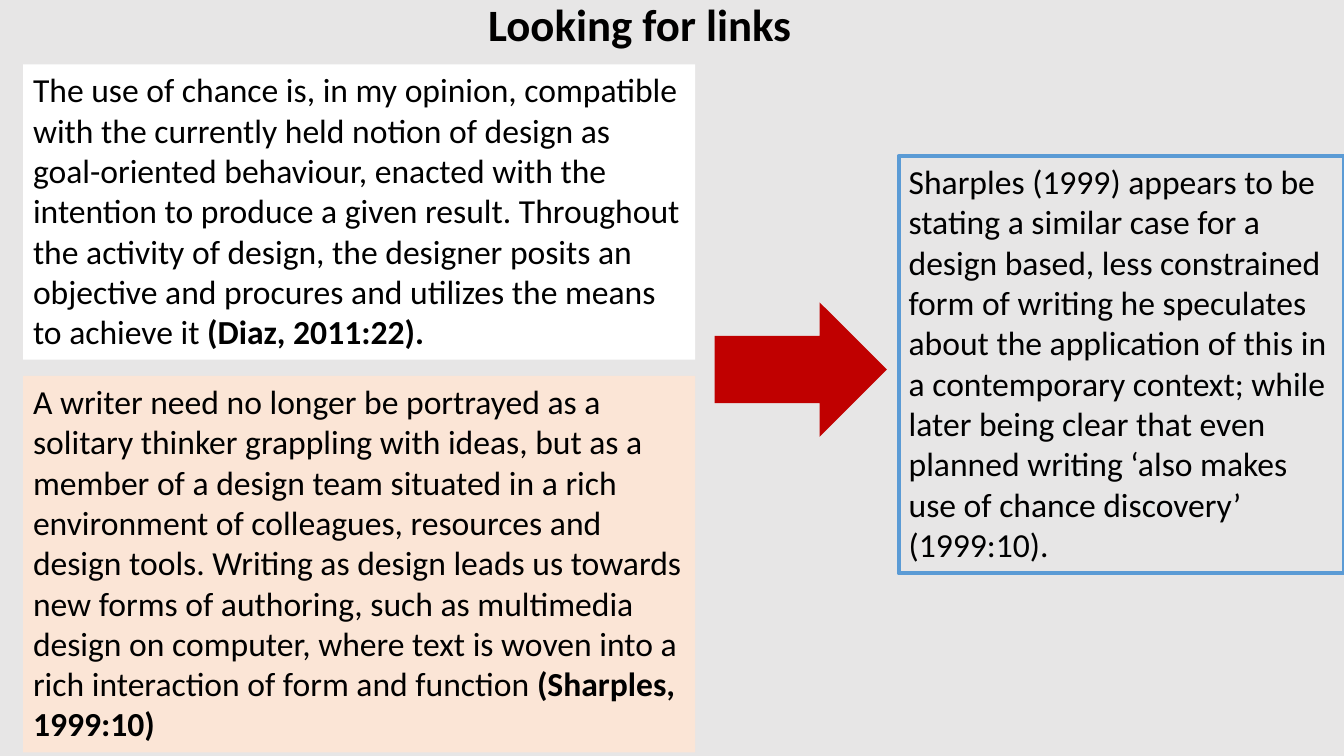
from dataclasses import dataclass
from typing import Optional

from pptx import Presentation
from pptx.dml.color import RGBColor
from pptx.enum.shapes import MSO_SHAPE
from pptx.enum.text import MSO_ANCHOR, MSO_AUTO_SIZE, PP_ALIGN
from pptx.util import Pt

RECT = MSO_SHAPE.RECTANGLE
ARROW = MSO_SHAPE.RIGHT_ARROW
TOP = MSO_ANCHOR.TOP
LEFT = PP_ALIGN.LEFT
NO_FIT = MSO_AUTO_SIZE.NONE

BLACK = RGBColor(0x00, 0x00, 0x00)
WHITE = RGBColor(0xFF, 0xFF, 0xFF)
GREY = RGBColor(0xE7, 0xE6, 0xE6)
PEACH = RGBColor(0xFB, 0xE5, 0xD6)
BLUE = RGBColor(0x5B, 0x9B, 0xD5)
RED = RGBColor(0xC0, 0x00, 0x00)

FONT = "Calibri"


@dataclass
class Box:
    left: float
    top: float
    width: float
    height: float
    text: str = ""
    cite: str = ""
    fill: Optional[RGBColor] = None
    line: Optional[RGBColor] = None


BOXES = [
    Box(16.5, 46, 480, 211,
        "The use of chance is, in my opinion, compatible with the currently "
        "held notion of design as goal-oriented behaviour, enacted with the "
        "intention to produce a given result. Throughout the activity of "
        "design, the designer posits an objective and procures and utilizes "
        "the means to achieve it ",
        "(Diaz, 2011:22).", fill=WHITE),
    Box(16.5, 268.5, 480, 269,
        "A writer need no longer be portrayed as a solitary thinker grappling "
        "with ideas, but as a member of a design team situated in a rich "
        "environment of colleagues, resources and design tools. Writing as "
        "design leads us towards new forms of authoring, such as multimedia "
        "design on computer, where text is woven into a rich interaction of "
        "form and function ",
        "(Sharples, 1999:10)", fill=PEACH),
    Box(642, 111.5, 318, 298,
        "Sharples (1999) appears to be stating a similar case for a design "
        "based, less constrained form of writing he speculates about the "
        "application of this in a contemporary context; while later being "
        "clear that even planned writing ‘also makes use of chance discovery’ "
        "(1999:10).", line=BLUE),
]
LINK = Box(510.5, 216, 123, 96, fill=RED)


def style(shape, size: float) -> None:
    """Set the text left and top, in black, wrapped and unscaled."""
    frame = shape.text_frame
    frame.word_wrap = True
    frame.auto_size = NO_FIT
    frame.vertical_anchor = TOP
    for para in frame.paragraphs:
        para.alignment = LEFT
        for run in para.runs:
            run.font.name = FONT
            run.font.size = Pt(size)
            run.font.color.rgb = BLACK


def add_form(slide, box: Box, kind: MSO_SHAPE):
    shape = slide.shapes.add_shape(
        kind, Pt(box.left), Pt(box.top), Pt(box.width), Pt(box.height))
    shape.shadow.inherit = False
    if box.fill is None:
        shape.fill.background()
    else:
        shape.fill.solid()
        shape.fill.fore_color.rgb = box.fill
    if box.line is None:
        shape.line.fill.background()
    else:
        shape.line.color.rgb = box.line
        shape.line.width = Pt(3)
    return shape


def add_quote(slide, box: Box) -> None:
    shape = add_form(slide, box, RECT)
    shape.text_frame.text = box.text
    if box.cite:
        run = shape.text_frame.paragraphs[0].add_run()
        run.text = box.cite
        run.font.bold = True
    style(shape, 24)


def set_title(slide) -> None:
    title = slide.shapes.title
    title.left, title.top = Pt(341.5), Pt(-6)
    title.width, title.height = Pt(386.5), Pt(46)
    title.text_frame.text = "Looking for links"
    style(title, 32)
    title.text_frame.paragraphs[0].runs[0].font.bold = True


def main() -> None:
    deck = Presentation()
    deck.slide_width, deck.slide_height = Pt(960), Pt(540)
    slide = deck.slides.add_slide(deck.slide_layouts[5])
    slide.background.fill.solid()
    slide.background.fill.fore_color.rgb = GREY
    set_title(slide)
    for box in BOXES:
        add_quote(slide, box)
    add_form(slide, LINK, ARROW)
    deck.save("out.pptx")


if __name__ == "__main__":
    main()
